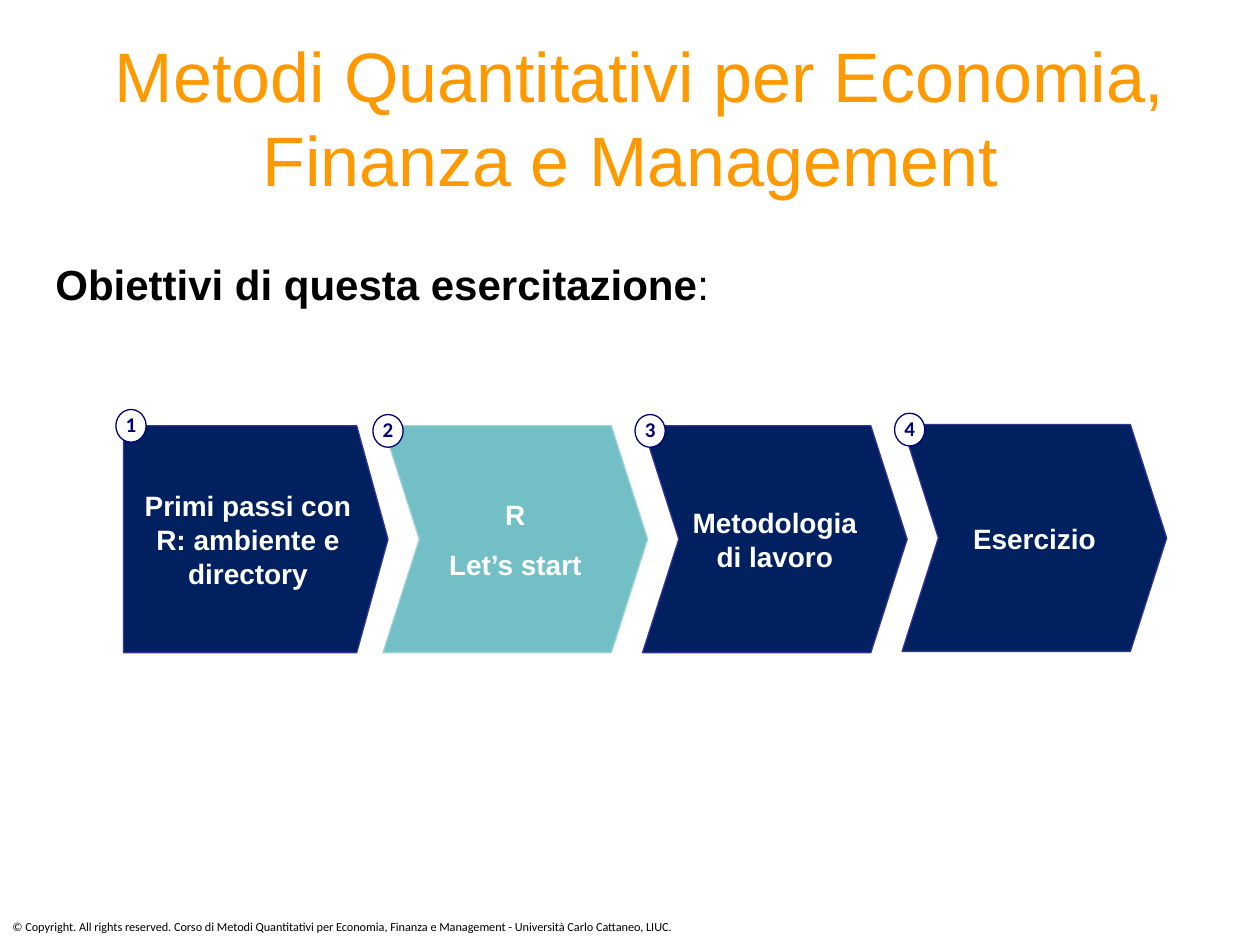
import pptx
import pptx.util
import pptx.dml.color
import pptx.enum.shapes
import pptx.enum.text

Inches, Pt = pptx.util.Inches, pptx.util.Pt
RGBColor = pptx.dml.color.RGBColor
Shape = pptx.enum.shapes.MSO_SHAPE
Align = pptx.enum.text.PP_ALIGN
Anchor = pptx.enum.text.MSO_ANCHOR

ORANGE = RGBColor(0xFF, 0x99, 0x00)
BLACK = RGBColor(0, 0, 0)
WHITE = RGBColor(0xFF, 0xFF, 0xFF)
NAVY = RGBColor(0x00, 0x20, 0x60)
INDIGO = RGBColor(0x33, 0x33, 0x99)
TEAL = RGBColor(0x72, 0xBF, 0xC5)
PALE_TEAL = RGBColor(0x9E, 0xD3, 0xD7)
BADGE_BLUE = RGBColor(0x00, 0x00, 0x74)

TITLE = " Metodi Quantitativi per Economia, Finanza e Management"
HEADING = ("Obiettivi di questa esercitazione", ":")
COPYRIGHT = ("© Copyright. All rights reserved. Corso di Metodi Quantitativi per Economia, "
             "Finanza e Management - Università Carlo Cattaneo, LIUC.")
# text, outline, point depth, fill, line, step lift, badge offset from the step's corner
STEPS = [
    ("Primi passi con R: ambiente e directory", Shape.PENTAGON, 0.138, NAVY, INDIGO, 0, (-0.06, -0.13)),
    ("R\nLet’s start", Shape.CHEVRON, 0.16, TEAL, PALE_TEAL, 0, (-0.08, -0.09)),
    ("Metodologia di lavoro", Shape.CHEVRON, 0.16, NAVY, INDIGO, 0, (-0.06, -0.09)),
    ("Esercizio", Shape.CHEVRON, 0.16, NAVY, INDIGO, 0.01, (-0.06, -0.09)),
]
STEP_LEFT, STEP_TOP, STEP_PITCH = 0.98, 3.38, 2.06
STEP_SIZE = (2.1, 1.8)
BADGE_SIZE = (0.24, 0.26)


def style(frame, font_name, size, color, bold=False, align=Align.LEFT):
    for paragraph in frame.paragraphs:
        paragraph.alignment = align
        for run in paragraph.runs:
            run.font.name, run.font.size, run.font.bold = font_name, Pt(size), bold
            run.font.color.rgb = color


def add_text(slide, box, text, *font, **options):
    frame = slide.shapes.add_textbox(*map(Inches, box)).text_frame
    frame.word_wrap = True
    frame.text = text
    style(frame, *font, **options)
    return frame


def add_outline(slide, kind, corner, size, fill, line, text, margins):
    shape = slide.shapes.add_shape(kind, *map(Inches, corner + size))
    shape.shadow.inherit = False
    shape.fill.solid()
    shape.fill.fore_color.rgb = fill
    shape.line.color.rgb = line
    shape.line.width = Pt(0.75)
    frame = shape.text_frame
    frame.text = text
    frame.vertical_anchor = Anchor.MIDDLE
    frame.margin_left = frame.margin_right = Inches(margins[0])
    frame.margin_top = frame.margin_bottom = Inches(margins[1])
    return shape


def add_step(slide, index, text, kind, depth, fill, line, lift, badge_offset):
    corner = (STEP_LEFT + index * STEP_PITCH, STEP_TOP - lift)
    step = add_outline(slide, kind, corner, STEP_SIZE, fill, line, text, (0.08, 0.04))
    step.adjustments[0] = depth
    step.text_frame.word_wrap = True
    style(step.text_frame, "Arial", 16, WHITE, bold=True, align=Align.CENTER)
    for paragraph in step.text_frame.paragraphs[1:]:
        paragraph.space_before = Pt(9)

    badge_corner = tuple(c + d for c, d in zip(corner, badge_offset))
    badge = add_outline(slide, Shape.OVAL, badge_corner, BADGE_SIZE, WHITE, BADGE_BLUE,
                        str(index + 1), (0, 0))
    badge.text_frame.word_wrap = False
    style(badge.text_frame, "Calibri", 12, BADGE_BLUE, bold=True, align=Align.CENTER)
    badge.text_frame.paragraphs[0].line_spacing = 0.9


def main():
    deck = pptx.Presentation()
    deck.slide_width, deck.slide_height = Inches(10), Inches(7.5)
    slide = deck.slides.add_slide(deck.slide_layouts[6])

    title = add_text(slide, (0.5, 0.3, 9, 1.25), TITLE, "Arial", 40, ORANGE, align=Align.CENTER)
    title.vertical_anchor = Anchor.MIDDLE

    heading = add_text(slide, (0.25, 2, 9.5, 3.53), HEADING[0], "Arial", 24, BLACK)
    heading.margin_left = Inches(0.19)
    heading.paragraphs[0].add_run().text = HEADING[1]
    style(heading, "Arial", 24, BLACK)
    heading.paragraphs[0].runs[0].font.bold = True

    for index, step in enumerate(STEPS):
        add_step(slide, index, *step)

    add_text(slide, (0, 7.25, 9.92, 0.22), COPYRIGHT, "Calibri", 7, BLACK)
    deck.save("out.pptx")


if __name__ == "__main__":
    main()
